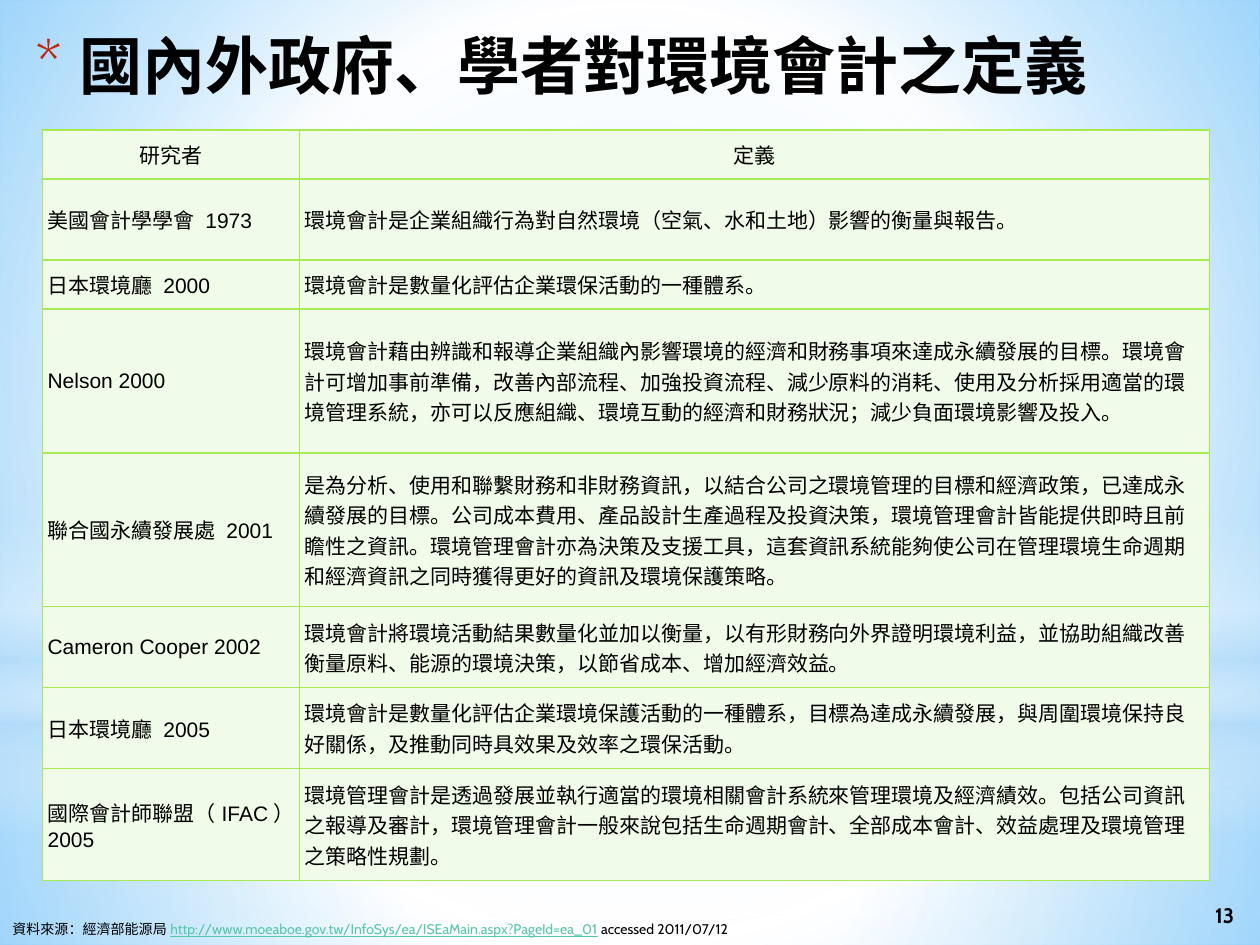
from lxml import etree
from pptx import Presentation
from pptx.dml.color import RGBColor
from pptx.enum.shapes import MSO_SHAPE
from pptx.enum.text import MSO_ANCHOR, MSO_AUTO_SIZE, PP_ALIGN
from pptx.oxml import parse_xml
from pptx.oxml.ns import nsdecls, qn
from pptx.util import Cm, Pt

RECTANGLE, OVAL = MSO_SHAPE.RECTANGLE, MSO_SHAPE.OVAL
TOP, MIDDLE = MSO_ANCHOR.TOP, MSO_ANCHOR.MIDDLE
LEFT, CENTER = PP_ALIGN.LEFT, PP_ALIGN.CENTER
NO_AUTOFIT = MSO_AUTO_SIZE.NONE

BLACK = RGBColor(0x00, 0x00, 0x00)
WHITE = RGBColor(0xFF, 0xFF, 0xFF)
SKY = RGBColor(0xB4, 0xDC, 0xFA)
PALE_BLUE = RGBColor(0x99, 0xD4, 0xFE)
BLUE = RGBColor(0x54, 0xBD, 0xFF)
RED = RGBColor(0xC3, 0x26, 0x0C)
TEAL = RGBColor(0x56, 0xC7, 0xAA)
BORDER_GREEN = RGBColor(0xA7, 0xEA, 0x52)
CELL_GREEN = RGBColor(0xF0, 0xFB, 0xE9)

TITLE_FORMAT = {"name": "Cabin", "size": Pt(36), "bold": True}
NUMBER_FORMAT = {"name": "Cabin", "size": Pt(12), "bold": True}
SOURCE_FORMAT = {"name": "Cabin", "size": Pt(8)}
TABLE_FORMAT = {"name": "Arial", "size": Pt(12)}

# Gradient stops: position %, colour, opacity %
BACKGROUND_STOPS = [(0, PALE_BLUE, 100), (60, WHITE, 100), (100, BLUE, 100)]
# Light layers: shape, box in cm, stops, linear or not
LIGHT_LAYERS = [
    (RECTANGLE, (0, 14.17, 25.4, 4.88),
     [(0, WHITE, 91), (37, WHITE, 76), (100, SKY, 79)], False),
    (RECTANGLE, (0, 0, 25.4, 14.17),
     [(0, WHITE, 89), (48, WHITE, 62), (100, SKY, 79)], False),
    (RECTANGLE, (0, 10.46, 25.4, 6.35),
     [(0, WHITE, 0), (29, WHITE, 30), (45, SKY, 40),
      (55, WHITE, 26), (65, SKY, 60), (100, WHITE, 0)], True),
    (OVAL, (0, 4.45, 25.4, 14.17),
     [(0, WHITE, 100), (56, WHITE, 0), (100, WHITE, 0)], False),
]

COLUMN_WIDTHS = [5.18, 18.34]
ROW_HEIGHTS = [0.99, 1.63, 0.99, 2.9, 3.1, 1.63, 1.63, 2.26]
DEFINITIONS = [
    ("研究者", "定義"),
    ("美國會計學學會 1973", "環境會計是企業組織行為對自然環境（空氣、水和土地）影響的衡量與報告。"),
    ("日本環境廳 2000", "環境會計是數量化評估企業環保活動的一種體系。"),
    ("Nelson 2000",
     "環境會計藉由辨識和報導企業組織內影響環境的經濟和財務事項來達成永續發展的目標。"
     "環境會計可增加事前準備，改善內部流程、加強投資流程、減少原料的消耗、使用及分析採用適當的環境管理系統，"
     "亦可以反應組織、環境互動的經濟和財務狀況；減少負面環境影響及投入。"),
    ("聯合國永續發展處 2001",
     "是為分析、使用和聯繫財務和非財務資訊，以結合公司之環境管理的目標和經濟政策，已達成永續發展的目標。"
     "公司成本費用、產品設計生產過程及投資決策，環境管理會計皆能提供即時且前瞻性之資訊。"
     "環境管理會計亦為決策及支援工具，這套資訊系統能夠使公司在管理環境生命週期和經濟資訊之同時"
     "獲得更好的資訊及環境保護策略。"),
    ("Cameron Cooper 2002",
     "環境會計將環境活動結果數量化並加以衡量，以有形財務向外界證明環境利益，"
     "並協助組織改善衡量原料、能源的環境決策，以節省成本、增加經濟效益。"),
    ("日本環境廳 2005",
     "環境會計是數量化評估企業環境保護活動的一種體系，目標為達成永續發展，"
     "與周圍環境保持良好關係，及推動同時具效果及效率之環保活動。"),
    ("國際會計師聯盟（IFAC）2005",
     "環境管理會計是透過發展並執行適當的環境相關會計系統來管理環境及經濟績效。"
     "包括公司資訊之報導及審計，環境管理會計一般來說包括生命週期會計、全部成本會計、"
     "效益處理及環境管理之策略性規劃。"),
]
SOURCE_RUNS = [
    ("資料來源：經濟部能源局", BLACK, False),
    ("http://www.moeaboe.gov.tw/InfoSys/ea/ISEaMain.aspx?PageId=ea_01", TEAL, True),
    (" accessed 2011/07/12", BLACK, False),
]


def add_run(paragraph, text, text_format, color=BLACK):
    run = paragraph.add_run()
    run.text = text
    for attribute, value in text_format.items():
        setattr(run.font, attribute, value)
    run.font.color.rgb = color


def set_gradient(properties, stops, linear=False):
    """Swap the solid fill in the properties for a gradient."""
    stop_xml = "".join(
        f'<a:gs pos="{position * 1000}"><a:srgbClr val="{color}">'
        f'<a:alpha val="{opacity * 1000}"/></a:srgbClr></a:gs>'
        for position, color, opacity in stops)
    direction = ('<a:lin ang="5400000" scaled="0"/>' if linear else
                 '<a:path path="circle"><a:fillToRect l="50000" t="50000" '
                 'r="50000" b="50000"/></a:path>')
    gradient = parse_xml(f'<a:gradFill {nsdecls("a")} rotWithShape="1">'
                         f'<a:gsLst>{stop_xml}</a:gsLst>{direction}</a:gradFill>')
    properties.replace(properties.find(qn("a:solidFill")), gradient)


def add_backdrop(slide):
    slide.background.fill.solid()
    set_gradient(slide.element.find(".//" + qn("p:bgPr")), BACKGROUND_STOPS)
    for preset, box, stops, linear in LIGHT_LAYERS:
        layer = slide.shapes.add_shape(preset, *map(Cm, box))
        layer.shadow.inherit = False
        layer.line.fill.background()
        layer.fill.solid()
        set_gradient(layer.element.spPr, stops, linear)


def add_title(slide, left, top, width, height):
    title = slide.shapes.title
    title.left, title.top, title.width, title.height = map(Cm, (left, top, width, height))
    # Bring the title in front of the light layers
    slide.shapes.element.append(title.element)
    frame = title.text_frame
    frame.auto_size, frame.vertical_anchor = NO_AUTOFIT, TOP
    paragraph = frame.paragraphs[0]
    paragraph.alignment = LEFT
    # Red asterisk with a hanging indent
    properties = paragraph._p.get_or_add_pPr()
    properties.set("marL", str(Cm(0.89)))
    properties.set("indent", str(-Cm(0.89)))
    bullet_color = etree.SubElement(properties, qn("a:buClr"))
    etree.SubElement(bullet_color, qn("a:srgbClr"), val=str(RED))
    etree.SubElement(properties, qn("a:buFont"), typeface="Cabin")
    etree.SubElement(properties, qn("a:buChar"), char="*")
    add_run(paragraph, "國內外政府、學者對環境會計之定義", TITLE_FORMAT)


def format_cell(cell):
    properties = cell._tc.get_or_add_tcPr()
    for side in ("lnL", "lnR", "lnT", "lnB"):
        properties.append(parse_xml(
            f'<a:{side} {nsdecls("a")} w="{Pt(1)}"><a:solidFill>'
            f'<a:srgbClr val="{BORDER_GREEN}"/></a:solidFill></a:{side}>'))
    cell.fill.solid()
    cell.fill.fore_color.rgb = CELL_GREEN
    cell.vertical_anchor = MIDDLE
    for side in ("left", "right", "top", "bottom"):
        setattr(cell, f"margin_{side}", Cm(0.1))


def add_definition_table(slide, left, top):
    box = map(Cm, (left, top, sum(COLUMN_WIDTHS), sum(ROW_HEIGHTS)))
    table = slide.shapes.add_table(len(ROW_HEIGHTS), len(COLUMN_WIDTHS), *box).table
    for column, width in zip(table.columns, COLUMN_WIDTHS):
        column.width = Cm(width)
    for row_index, (row, texts) in enumerate(zip(table.rows, DEFINITIONS)):
        row.height = Cm(ROW_HEIGHTS[row_index])
        for cell, text in zip(row.cells, texts):
            format_cell(cell)
            paragraph = cell.text_frame.paragraphs[0]
            paragraph.alignment = LEFT if row_index else CENTER
            add_run(paragraph, text, TABLE_FORMAT)


def add_text_frame(slide, box):
    frame = slide.shapes.add_textbox(*map(Cm, box)).text_frame
    frame.word_wrap = True
    return frame


def add_page_number(slide, *box):
    frame = add_text_frame(slide, box)
    frame.vertical_anchor = MIDDLE
    frame.paragraphs[0].alignment = CENTER
    add_run(frame.paragraphs[0], "13", NUMBER_FORMAT)


def add_source(slide, *box):
    paragraph = add_text_frame(slide, box).paragraphs[0]
    for text, color, underline in SOURCE_RUNS:
        add_run(paragraph, text, SOURCE_FORMAT | {"underline": underline}, color)


def main():
    presentation = Presentation()
    presentation.slide_width, presentation.slide_height = Cm(25.4), Cm(19.05)
    slide = presentation.slides.add_slide(presentation.slide_layouts[5])
    add_backdrop(slide)
    add_title(slide, 0.46, 0.41, 23.44, 3.66)
    add_page_number(slide, 23.98, 17.93, 1.42, 1.02)
    add_definition_table(slide, 0.86, 2.62)
    add_source(slide, 0, 18.44, 23.39, 0.61)
    presentation.save("out.pptx")


if __name__ == "__main__":
    main()
